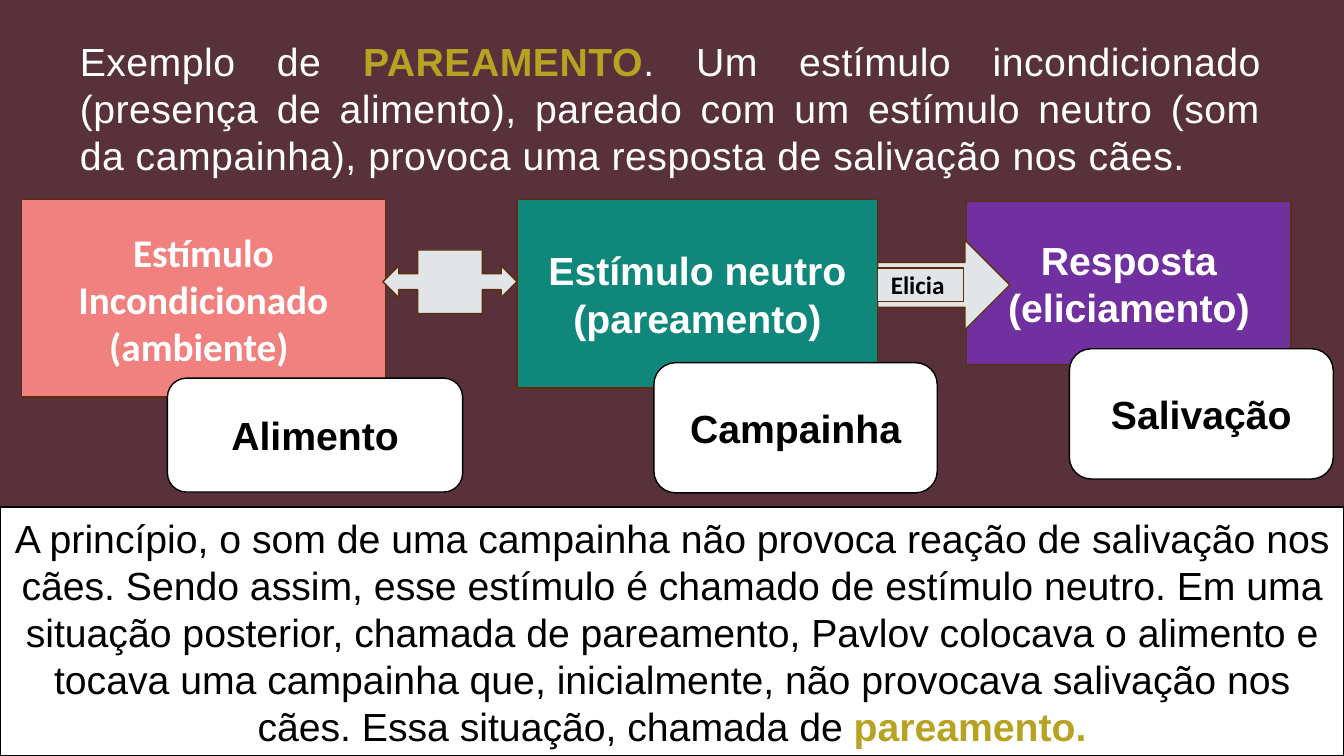
import pptx
import pptx.util
import pptx.dml.color
import pptx.enum.shapes
import pptx.enum.text

Cm, Pt = pptx.util.Cm, pptx.util.Pt
RGBColor = pptx.dml.color.RGBColor
SHAPE = pptx.enum.shapes.MSO_SHAPE
ALIGN = pptx.enum.text.PP_ALIGN
ANCHOR = pptx.enum.text.MSO_ANCHOR

WINE = RGBColor(0x58, 0x31, 0x3B)
GOLD = RGBColor(0xB8, 0xA2, 0x21)
WHITE = RGBColor(0xFF, 0xFF, 0xFF)
BLACK = RGBColor(0, 0, 0)
CORAL = RGBColor(0xF1, 0x81, 0x7F)
TEAL = RGBColor(0x0F, 0x87, 0x7A)
PURPLE = RGBColor(0x70, 0x30, 0xA0)
GREY = RGBColor(0xE2, 0xE5, 0xE8)
BROWN = RGBColor(0x5D, 0x2E, 0x0A)

# Text formats
ARIAL = {"name": "Arial", "size": Pt(28), "bold": False}
ARIAL_BOLD = {**ARIAL, "bold": True}
CALIBRI_BOLD = {**ARIAL_BOLD, "name": "Calibri"}
SMALL = {**CALIBRI_BOLD, "size": Pt(18)}

# Content: (text, format, colour) runs
TITLE = [
    ("Exemplo de ", ARIAL, WHITE),
    ("PAREAMENTO", ARIAL_BOLD, GOLD),
    (". Um estímulo incondicionado (presença de alimento), pareado com um "
     "estímulo neutro (som da campainha), provoca uma resposta de salivação "
     "nos cães.", ARIAL, WHITE),
]
EXPLANATION = [
    ("A princípio, o som de uma campainha não provoca reação de salivação nos "
     "cães. Sendo assim, esse estímulo é chamado de estímulo neutro. Em uma "
     "situação posterior, chamada de pareamento, Pavlov colocava o alimento e "
     "tocava uma campainha que, inicialmente, não provocava salivação nos "
     "cães. Essa situação, chamada de ", ARIAL, BLACK),
    ("pareamento.", ARIAL_BOLD, GOLD),
]

# Diagram: (left, top, width, height in cm), fill, runs
STAGES = [
    ((0.54, 5.03, 9.17, 4.98), CORAL,
     [("Estímulo Incondicionado (ambiente) ", CALIBRI_BOLD, WHITE)]),
    ((13.03, 5.03, 9.09, 4.75), TEAL,
     [("Estímulo neutro (pareamento)", ARIAL_BOLD, WHITE)]),
    ((24.36, 5.08, 8.18, 4.11), PURPLE,
     [("Resposta (eliciamento)", ARIAL_BOLD, WHITE)]),
]
LINKS = [
    (SHAPE.LEFT_RIGHT_ARROW_CALLOUT, (9.65, 6.3, 3.38, 1.6), []),
    (SHAPE.RIGHT_ARROW, (22.12, 6.05, 3.33, 2.26), []),
    (SHAPE.RECTANGLE, (22.12, 6.75, 2.16, 0.85), [("Elicia ", SMALL, BLACK)]),
]
EXAMPLES = [
    ("Alimento", (4.22, 9.53, 7.44, 2.87)),
    ("Campainha", (16.48, 9.14, 7.14, 3.28)),
    ("Salivação", (26.95, 8.79, 6.65, 3.28)),
]

prs = pptx.Presentation()
prs.slide_width, prs.slide_height = Cm(33.87), Cm(19.05)
s = prs.slides.add_slide(prs.slide_layouts[5])
s.background.fill.solid()
s.background.fill.fore_color.rgb = WINE


def write(p, runs, align):
    p.alignment = align
    for text, fmt, colour in runs:
        r = p.add_run()
        r.text = text
        for key, value in fmt.items():
            setattr(r.font, key, value)
        r.font.color.rgb = colour


def add_box(kind, box, fill, line, runs):
    sp = s.shapes.add_shape(kind, *map(Cm, box))
    sp.shadow.inherit = False
    sp.fill.solid()
    sp.fill.fore_color.rgb = fill
    sp.line.color.rgb = line
    sp.line.width = Pt(1)
    tf = sp.text_frame
    tf.word_wrap = True
    tf.vertical_anchor = ANCHOR.MIDDLE
    if runs:
        write(tf.paragraphs[0], runs, ALIGN.CENTER)


# Title
title = s.shapes.title
for key, value in zip(("left", "top", "width", "height"), (2.01, 0.94, 29.79, 4.11)):
    setattr(title, key, Cm(value))
tf = title.text_frame
for key, value in {"margin_left": 0, "margin_top": 0, "margin_right": 0,
                   "margin_bottom": 0, "word_wrap": True,
                   "vertical_anchor": ANCHOR.TOP,
                   "auto_size": pptx.enum.text.MSO_AUTO_SIZE.NONE}.items():
    setattr(tf, key, value)
write(tf.paragraphs[0], TITLE, ALIGN.JUSTIFY)
for r in tf.paragraphs[0].runs:
    r.font._element.set("spc", "40")  # letter spacing, 0.4 pt

# Stages, the arrows between them, and their examples
for box, fill, runs in STAGES:
    add_box(SHAPE.RECTANGLE, box, fill, BROWN, runs)
for kind, box, runs in LINKS:
    add_box(kind, box, GREY, BROWN, runs)
for text, box in EXAMPLES:
    add_box(SHAPE.ROUNDED_RECTANGLE, box, WHITE, BLACK, [(text, ARIAL_BOLD, BLACK)])

# Explanation
add_box(SHAPE.RECTANGLE, (0, 12.78, 33.87, 6.27), WHITE, BLACK, EXPLANATION)

prs.save("out.pptx")
